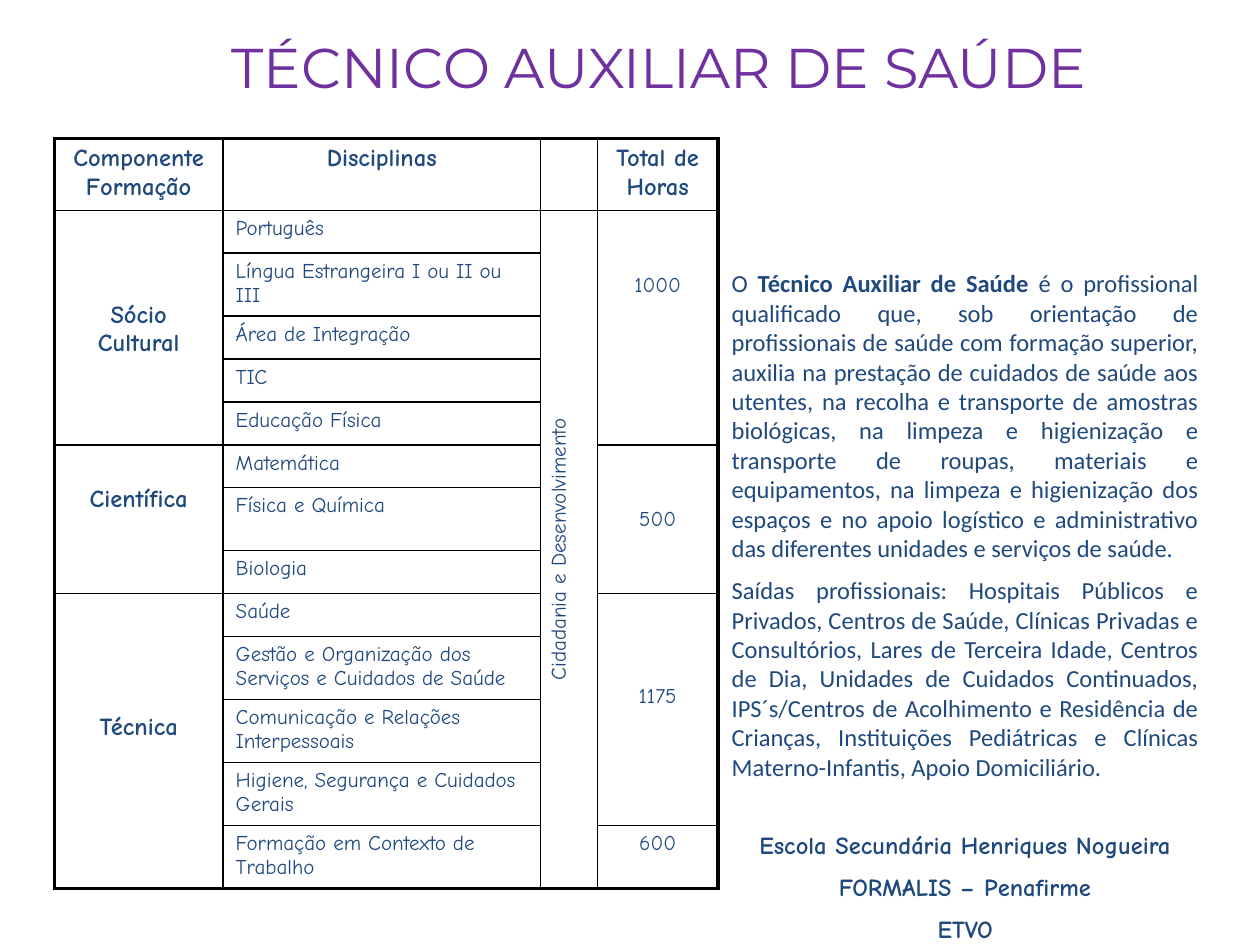
"""Build the health assistant course slide."""
import pptx
import pptx.util
import pptx.dml.color
import pptx.enum.text
import pptx.oxml
import lxml.etree

Pt = pptx.util.Pt
ALIGN = pptx.enum.text.PP_ALIGN
NAVY, PURPLE, BLACK = "1F497D", "7030A0", "000000"
HAND, SANS, HEAD = "Comic Neue", "Calibri", "Montserrat"
THICK, THIN = 2.25, 1
INSET, LINE = 3.6, 16.2

TITLE = "TÉCNICO AUXILIAR DE SAÚDE"
WIDTHS = [96.5, 181.4, 32.4, 69.1]
HEADS = ["Componente Formação", "Disciplinas", "", "Total de Horas"]
COURSES = [
    ("Português", 1),
    ("Língua Estrangeira I ou II ou III", 2),
    ("Área de Integração", 1),
    ("TIC", 1),
    ("Educação Física", 1),
    ("Matemática", 1),
    ("Física e Química", 2),
    ("Biologia", 1),
    ("Saúde", 1),
    ("Gestão e Organização dos Serviços e Cuidados de Saúde", 2),
    ("Comunicação e Relações Interpessoais", 2),
    ("Higiene, Segurança e Cuidados Gerais", 2),
    ("Formação em Contexto de Trabalho", 2),
]
HEIGHTS = {1: 24.5, 2: 36}
PARTS = [("Sócio Cultural", 5, 3), ("Científica", 3, 1.2), ("Técnica", 5, 4)]
THEME = [("Cidadania e Desenvolvimento", 13, 0)]
HOURS = [("1000", 5, 2), ("500", 3, 2), ("1175", 4, 3), ("600", 1, 0)]
COLUMNS = [
    (PARTS, dict(size=14, bold=True)),
    ([(name, 1, 0) for name, lines in COURSES], dict(align=ALIGN.LEFT)),
    (THEME, {}),
    (HOURS, {}),
]
ABOUT = [
    ("O ", False),
    ("Técnico Auxiliar de Saúde ", True),
    ("é o profissional qualificado que, sob orientação de profissionais de "
     "saúde com formação superior, auxilia na prestação de cuidados de saúde "
     "aos utentes, na recolha e transporte de amostras biológicas, na limpeza "
     "e higienização e transporte de roupas, materiais e equipamentos, na "
     "limpeza e higienização dos espaços e no apoio logístico e administrativo "
     "das diferentes unidades e serviços de saúde.", False),
]
JOBS = [
    ("Saídas profissionais: Hospitais Públicos e Privados, Centros de Saúde, "
     "Clínicas Privadas e Consultórios, Lares de Terceira Idade, Centros de "
     "Dia, Unidades de Cuidados Continuados, IPS´s/Centros de Acolhimento e "
     "Residência de Crianças, Instituições Pediátricas e Clínicas "
     "Materno-Infantis, Apoio Domiciliário.", False),
]
SCHOOLS = [
    ("Escola Secundária Henriques Nogueira", 28),
    ("FORMALIS – Penafirme", 7.2),
    ("ETVO", 7.2),
]


def color(code):
    return pptx.dml.color.RGBColor.from_string(code)


def write(para, text, size=12, font=HAND, fill=NAVY, bold=False,
          align=ALIGN.CENTER, before=0):
    para.alignment = align
    para.space_before = Pt(before)
    run = para.add_run()
    run.text = text
    run.font.size = Pt(size)
    run.font.name = font
    run.font.bold = bold
    run.font.color.rgb = color(fill)


def border(cell, sides):
    props = cell._tc.get_or_add_tcPr()
    for side, width in zip("LRTB", sides):
        line = lxml.etree.SubElement(props, pptx.oxml.ns.qn("a:ln" + side))
        if width:
            line.set("w", str(int(Pt(width))))
            fill = lxml.etree.SubElement(line, pptx.oxml.ns.qn("a:solidFill"))
            tint = lxml.etree.SubElement(fill, pptx.oxml.ns.qn("a:srgbClr"))
            tint.set("val", BLACK)
        else:
            lxml.etree.SubElement(line, pptx.oxml.ns.qn("a:noFill"))


def block(table, col, row, span, text, lift=0, **style):
    last = row + span - 1
    end = THICK if last == len(COURSES) else THIN
    left = THICK if col == 0 else THIN
    right = THICK if col == len(WIDTHS) - 1 else THIN
    for at in range(row, last + 1):
        cell = table.cell(at, col)
        top = (THIN if row else THICK) if at == row else 0
        low = end if at in (row, last) else 0
        border(cell, (left, right, top, low))
        cell.fill.background()
    cell = table.cell(row, col)
    if span > 1:
        cell.merge(table.cell(last, col))
    cell.margin_left = cell.margin_right = Pt(7.2)
    cell.margin_top = Pt(INSET + lift * LINE)
    cell.margin_bottom = Pt(INSET)
    if text:
        write(cell.text_frame.paragraphs[0], text, **style)
    return cell


def grid(slide):
    heights = [41] + [HEIGHTS[lines] for name, lines in COURSES]
    frame = slide.shapes.add_table(
        len(heights), len(WIDTHS), Pt(31), Pt(79.2),
        Pt(sum(WIDTHS)), Pt(sum(heights)))
    table = frame.table
    table.first_row = table.horz_banding = False
    for row, high in zip(table.rows, heights):
        row.height = Pt(high)
    for col, (items, style) in enumerate(COLUMNS):
        table.columns[col].width = Pt(WIDTHS[col])
        block(table, col, 0, 1, HEADS[col], size=14, bold=True)
        row = 1
        for text, span, lift in items:
            cell = block(table, col, row, span, text, lift, **style)
            if items is THEME:
                cell._tc.get_or_add_tcPr().set("vert", "vert270")
            row += span


def panel(slide):
    box = slide.shapes.add_textbox(Pt(411), Pt(149.8), Pt(281), Pt(497))
    body = box.text_frame
    body.word_wrap = True
    body.auto_size = pptx.enum.text.MSO_AUTO_SIZE.SHAPE_TO_FIT_TEXT
    for para, runs in ((body.paragraphs[0], ABOUT), (body.add_paragraph(), JOBS)):
        for text, bold in runs:
            write(para, text, size=14, font=SANS, bold=bold,
                  align=ALIGN.JUSTIFY, before=7.2)
    for name, gap in SCHOOLS:
        write(body.add_paragraph(), name, size=14, bold=True, before=gap)


def main():
    deck = pptx.Presentation()
    deck.slide_width, deck.slide_height = Pt(720), Pt(540)
    slide = deck.slides.add_slide(deck.slide_layouts[6])
    box = slide.shapes.add_textbox(Pt(57.6), Pt(15), Pt(638), Pt(57))
    box.text_frame.word_wrap = False
    write(box.text_frame.paragraphs[0], TITLE, size=32, font=HEAD, fill=PURPLE)
    grid(slide)
    panel(slide)
    deck.save("out.pptx")


if __name__ == "__main__":
    main()
